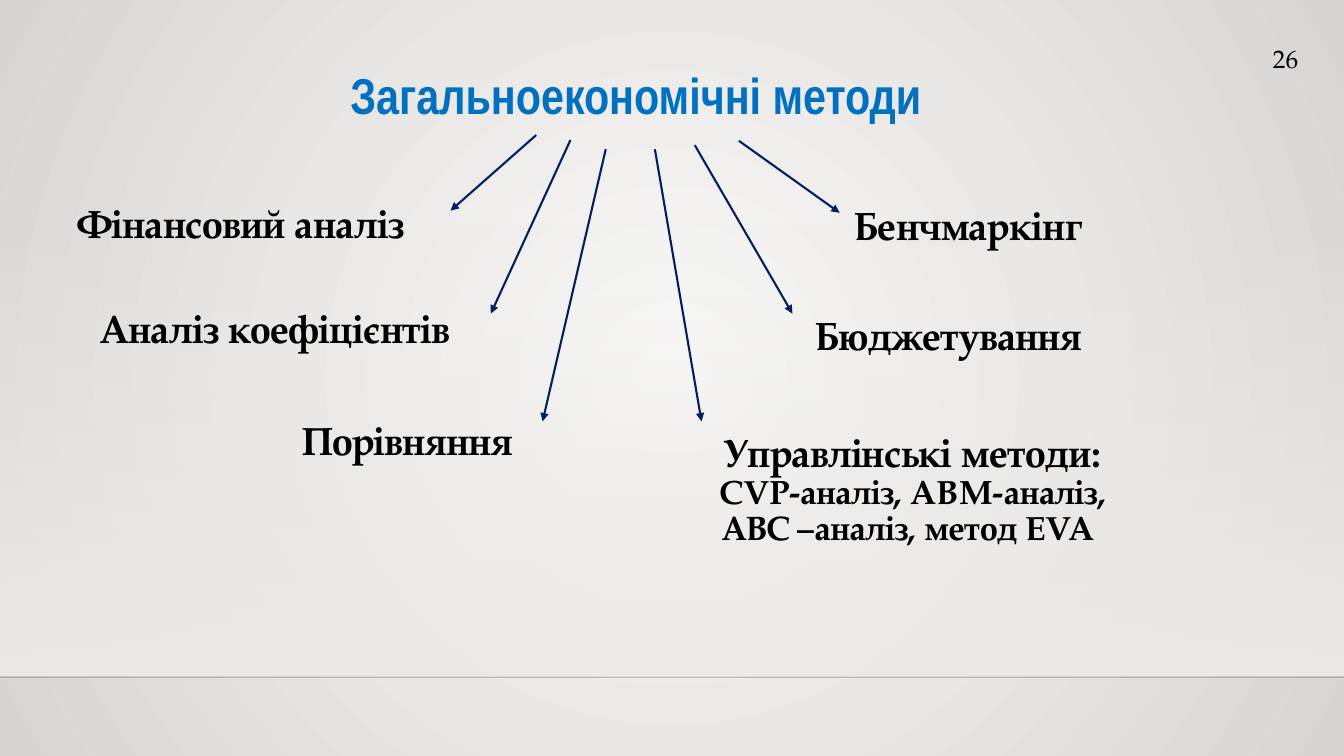
from dataclasses import dataclass

from lxml.etree import SubElement
from pptx import Presentation
from pptx.dml.color import RGBColor as Rgb
from pptx.enum.shapes import MSO_CONNECTOR as Connector, MSO_SHAPE as Shape
from pptx.enum.text import MSO_ANCHOR as Anchor, PP_ALIGN as Align
from pptx.oxml.ns import qn
from pptx.util import Pt


@dataclass(frozen=True)
class Theme:
    heading_font: str = "Arial Narrow"
    body_font: str = "TeX Gyre Pagella"
    heading: Rgb = Rgb(0x00, 0x70, 0xC0)
    ink: Rgb = Rgb(0x00, 0x00, 0x00)
    arrow: Rgb = Rgb(0x00, 0x20, 0x60)
    centre: Rgb = Rgb(0xFA, 0xFA, 0xF9)
    edge: Rgb = Rgb(0xD7, 0xD5, 0xD2)
    wall: Rgb = Rgb(0xED, 0xEB, 0xE7)
    heading_size: int = 36
    label_size: int = 28
    detail_size: int = 24
    number_size: int = 18


theme = Theme()


def write(box, place, runs, font, color, bold=True, align=Align.LEFT):
    """Move a box and fill its only paragraph with (text, size) runs."""
    box.left, box.top, box.width, box.height = map(Pt, place)
    frame = box.text_frame
    frame.word_wrap = True
    frame.vertical_anchor = Anchor.TOP
    para = frame.paragraphs[0]
    para.alignment = align
    for text, size in runs:
        span = para.add_run()
        span.text = text
        span.font.name = font
        span.font.size = Pt(size)
        span.font.bold = bold
        span.font.color.rgb = color
    return para


def draw_line(start, end, color, width):
    line = page.shapes.add_connector(Connector.STRAIGHT, *map(Pt, start + end))
    line.line.color.rgb = color
    line.line.width = Pt(width)
    SubElement(line.element.spPr, qn("a:effectLst"))
    return line


deck = Presentation()
deck.slide_width, deck.slide_height = Pt(960), Pt(540)
page = deck.slides.add_slide(deck.slide_layouts[5])

# Background: radial gradient
backdrop = page.background.fill
backdrop.gradient()
for stop, color in zip(backdrop.gradient_stops, (theme.centre, theme.edge)):
    stop.color.rgb = color
linear = next(page.element.iter(qn("a:lin")))
gradient = linear.getparent()
gradient.remove(linear)
radial = SubElement(gradient, qn("a:path"), path="circle")
SubElement(radial, qn("a:fillToRect"), l="50000", t="50000", r="50000", b="50000")

# Wall fading in towards the floor line
wall = page.shapes.add_shape(Shape.RECTANGLE, 0, Pt(158.4), Pt(960), Pt(324))
wall.shadow.inherit = False
wall.line.fill.background()
wall.fill.gradient()
wall.fill.gradient_angle = 270
for stop in wall.fill.gradient_stops:
    stop.color.rgb = theme.wall
SubElement(next(wall.element.spPr.iter(qn("a:srgbClr"))), qn("a:alpha"), val="0")

floor = draw_line((0, 483.8), (960, 483.8), theme.ink, 1)
SubElement(next(floor.element.spPr.iter(qn("a:srgbClr"))), qn("a:alpha"), val="20000")

write(page.shapes.title, (243, 42.3, 437, 51.1),
      [("Загальноекономічні методи", theme.heading_size)],
      theme.heading_font, theme.heading)

# Methods
labels = [
    ("Фінансовий аналіз", 48.2, 139, 289),
    ("Аналіз коефіцієнтів", 64.8, 213.8, 307),
    ("Порівняння", 208.8, 293.8, 188),
    ("Бюджетування", 575.3, 218.9, 235),
    ("Бенчмаркінг", 603.2, 140.4, 202),
]
for text, left, top, width in labels:
    write(page.shapes.add_textbox(0, 0, 0, 0), (left, top, width, 41),
          [(text, theme.label_size)], theme.body_font, theme.ink)

management = write(
    page.shapes.add_textbox(0, 0, 0, 0), (486.8, 306.7, 330, 89.3),
    [("Управлінські методи: ", theme.label_size),
     ("CVP-аналіз, ABM-аналіз, АВС –аналіз, метод EVA ", theme.detail_size)],
    theme.body_font, theme.ink, align=Align.CENTER)
management.line_spacing = 0.89

# Arrows from the heading to each method
arrows = [
    ((383, 96.5), (321.8, 150.5)),
    ((407.5, 100), (350.6, 224)),
    ((496.3, 103.7), (566, 224)),
    ((527.8, 100.6), (599.8, 152)),
    ((432.7, 106.6), (387.6, 301)),
    ((467.8, 106.6), (501.1, 301)),
]
for start, end in arrows:
    arrow = draw_line(start, end, theme.arrow, 1.5)
    SubElement(arrow.line._get_or_add_ln(), qn("a:tailEnd"), type="triangle")

write(page.shapes.add_textbox(0, 0, 0, 0), (902.2, 27.4, 38.9, 28.8),
      [("26", theme.number_size)], theme.body_font, theme.ink, bold=False)

deck.save("out.pptx")
